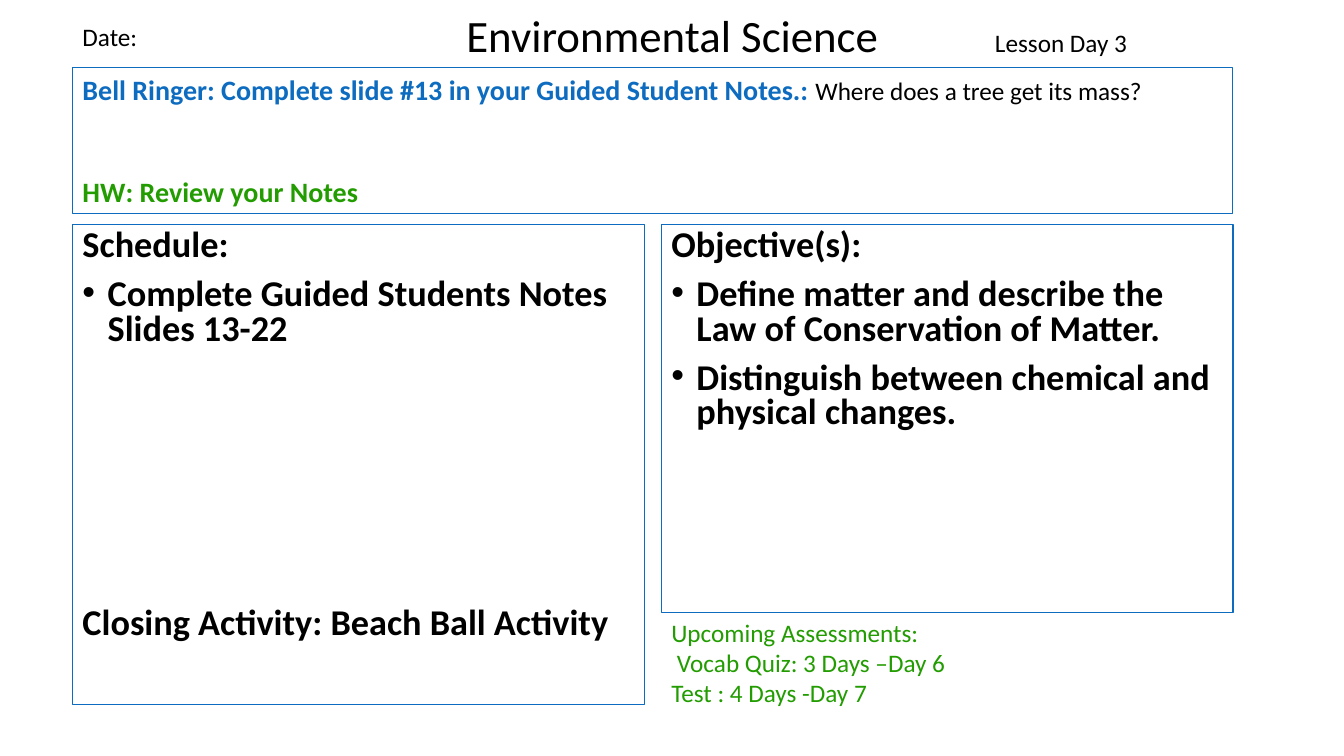
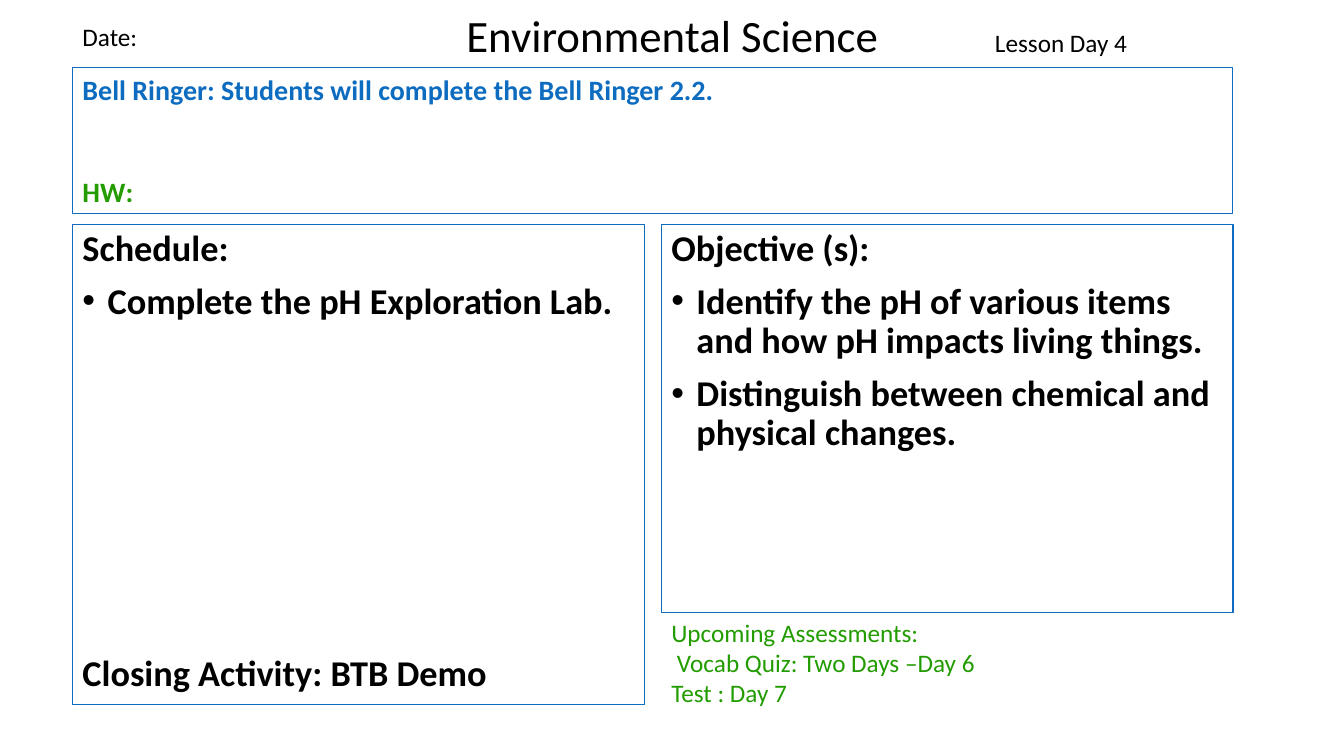
import pptx
import pptx.dml.color
import pptx.enum.text
import pptx.util
from lxml import etree
from pptx.oxml.ns import qn

Inches, Pt = pptx.util.Inches, pptx.util.Pt

# Content
COURSE = "Environmental Science"
LESSONS = [
    {
        "day": 3,
        "bell": "Bell Ringer: Complete slide #13 in your Guided Student Notes.: ",
        "question": "Where does a tree get its mass?",
        "homework": "HW: Review your Notes",
        "schedule": ["Complete Guided Students Notes Slides 13-22"],
        "closing": "Closing Activity: Beach Ball Activity",
        "objective_title": "Objective(s):",
        "objectives": ["Define matter and describe the Law of Conservation of Matter.",
                       "Distinguish between chemical and physical changes."],
        "upcoming": ["Upcoming Assessments:", " Vocab Quiz: 3 Days –Day 6",
                     "Test : 4 Days -Day 7"],
        "line_spacing": 0.8,
        "closing_gap": 185,
    },
    {
        "day": 4,
        "bell": "Bell Ringer: Students will complete the Bell Ringer 2.2.",
        "question": "",
        "homework": "HW:",
        "schedule": ["Complete the pH Exploration Lab."],
        "closing": "Closing Activity: BTB Demo",
        "objective_title": "Objective (s):",
        "objectives": ["Identify the pH of various items and how pH impacts living things.",
                       "Distinguish between chemical and physical changes."],
        "upcoming": ["Upcoming Assessments:", " Vocab Quiz: Two Days –Day 6",
                     "Test : Day 7"],
        "line_spacing": 0.9,
        "closing_gap": 238,
    },
]

# Shared style
FONT = "Calibri"
COLORS = {"text": "000000", "blue": "0D6CBF", "green": "229C00"}
TITLE, PANEL, BELL, NOTE = 32, 25.9, 20, 18
LEFT, RIGHT, COLUMN = 0.72, 6.56, 5.67
PANEL_TOP = 2.23
HOMEWORK_GAP = 48.8
PARAGRAPH_GAP = 10


def add_box(slide, left, top, width, height, outlined=False):
    sp = slide.shapes.add_textbox(Inches(left), Inches(top), Inches(width), Inches(height))
    sp.text_frame.word_wrap = True
    if outlined:
        sp.line.color.rgb = pptx.dml.color.RGBColor.from_string(COLORS["blue"])
        sp.line.width = Pt(0.75)
    return sp.text_frame


def next_paragraph(tf):
    first = tf.paragraphs[0]
    return tf.add_paragraph() if first.runs else first


def add_run(p, text, size, color="text", bold=False):
    r = p.add_run()
    r.text = text
    r.font.name, r.font.size, r.font.bold = FONT, Pt(size), bold
    r.font.color.rgb = pptx.dml.color.RGBColor.from_string(COLORS[color])


def add_bullet(p):
    pPr = p._p.get_or_add_pPr()
    pPr.set("marL", str(Inches(0.25)))
    pPr.set("indent", str(-Inches(0.25)))
    etree.SubElement(pPr, qn("a:buFont")).set("typeface", "Arial")
    etree.SubElement(pPr, qn("a:buChar")).set("char", "•")


def add_panel(slide, left, height, heading, bullets, spacing, closing="", closing_gap=0):
    tf = add_box(slide, left, PANEL_TOP, COLUMN, height, outlined=True)
    lines = [(heading, False, PARAGRAPH_GAP)]
    lines += [(text, True, PARAGRAPH_GAP) for text in bullets]
    if closing:
        lines.append((closing, False, closing_gap))
    for text, bulleted, gap in lines:
        p = next_paragraph(tf)
        p.line_spacing, p.space_before = spacing, Pt(gap)
        if bulleted:
            add_bullet(p)
        add_run(p, text, PANEL, bold=True)


def add_header(slide, day):
    p = add_box(slide, 4.2, 0.03, 4.94, 0.64).paragraphs[0]
    p.alignment = pptx.enum.text.PP_ALIGN.CENTER
    add_run(p, COURSE, TITLE)
    add_run(add_box(slide, LEFT, 0.16, 3.47, 0.4).paragraphs[0], "Date:", NOTE)
    add_run(add_box(slide, 9.77, 0.22, 1.9, 0.4).paragraphs[0], f"Lesson Day {day}", NOTE)


def add_bell_ringer(slide, bell, question, homework):
    tf = add_box(slide, LEFT, 0.67, 11.5, 1.45, outlined=True)
    p = tf.paragraphs[0]
    add_run(p, bell, BELL, "blue", bold=True)
    if question:
        add_run(p, question, NOTE)
    p = tf.add_paragraph()
    p.space_before = Pt(HOMEWORK_GAP)
    add_run(p, homework, BELL, "green", bold=True)


def add_lesson(prs, lesson):
    slide = prs.slides.add_slide(prs.slide_layouts[6])
    add_header(slide, lesson["day"])
    add_bell_ringer(slide, lesson["bell"], lesson["question"], lesson["homework"])
    spacing = lesson["line_spacing"]
    add_panel(slide, LEFT, 4.76, "Schedule:", lesson["schedule"], spacing,
              lesson["closing"], lesson["closing_gap"])
    add_panel(slide, RIGHT, 3.85, lesson["objective_title"], lesson["objectives"], spacing)
    # Assessments under the objectives
    tf = add_box(slide, RIGHT, 6.07, COLUMN, 1.01)
    for text in lesson["upcoming"]:
        add_run(next_paragraph(tf), text, NOTE, "green")


def main():
    prs = pptx.Presentation()
    prs.slide_width, prs.slide_height = Inches(13.33), Inches(7.5)
    for lesson in LESSONS:
        add_lesson(prs, lesson)
    prs.save("out.pptx")


if __name__ == "__main__":
    main()
